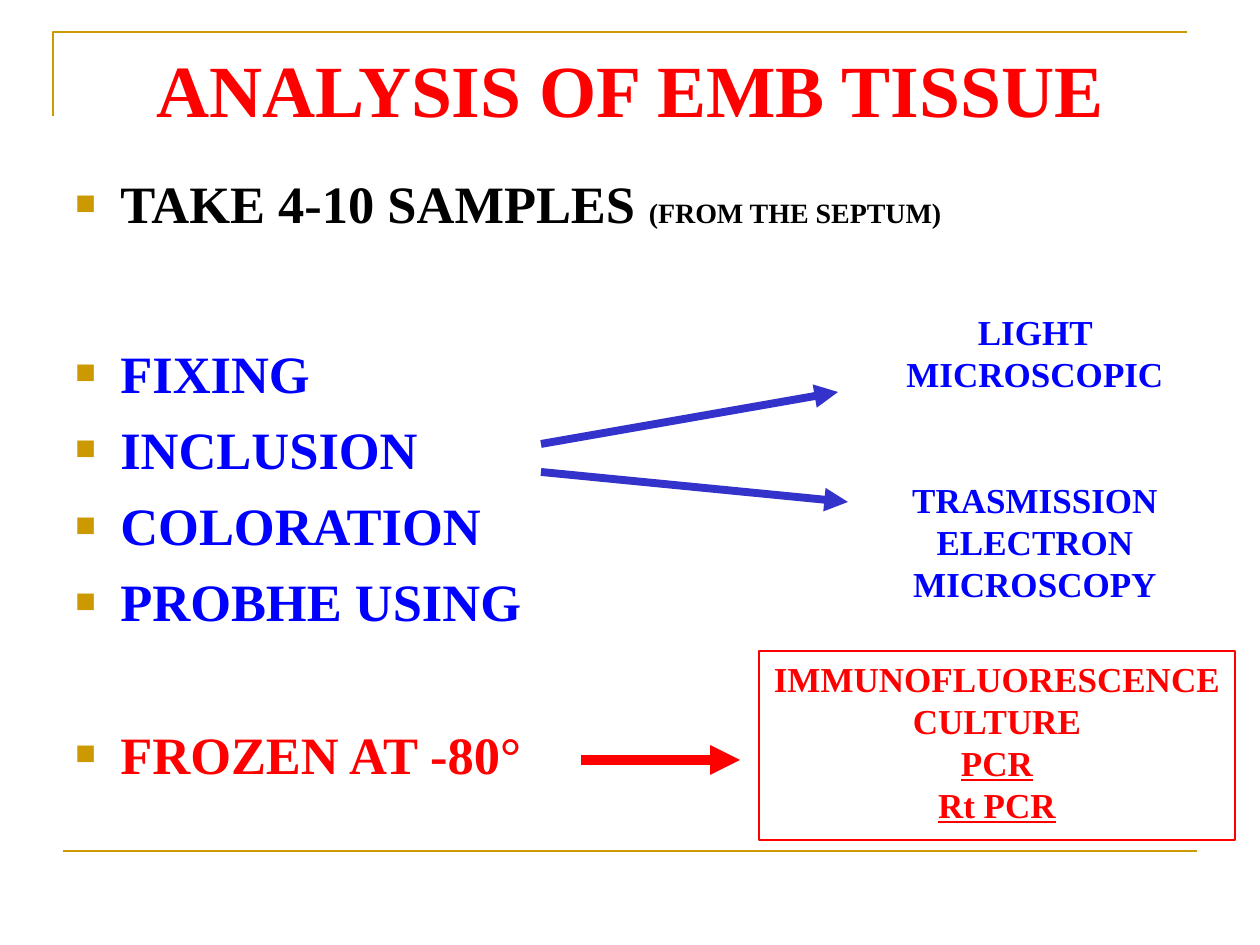
from dataclasses import dataclass

from lxml import etree
from pptx import Presentation, util as u
from pptx.dml.color import RGBColor
from pptx.enum import shapes, text
from pptx.oxml.ns import qn

PX = 914400 / 126  # EMU in one px


@dataclass(frozen=True)
class Theme:
    font: str = "Times New Roman"
    gold: str = "CC9900"
    red: str = "FF0000"
    blue: str = "0000FF"
    navy: str = "3333CC"
    black: str = "000000"
    title: int = 42
    body: int = 30
    label: int = 20
    note: int = 16
    thin: float = 1.5
    thick: float = 4.5
    heavy: float = 5.67


def emu(*vals):
    return [u.Emu(round(v * PX)) for v in vals]


def rgb(code):
    return RGBColor.from_string(code)


class Page:
    def __init__(self, slide, theme):
        self.slide = slide
        self.items = slide.shapes
        self.theme = theme

    def run(self, para, words, size, color, under=False):
        run = para.add_run()
        run.text = words
        font = run.font
        font.name, font.size, font.bold = self.theme.font, u.Pt(size), True
        font.color.rgb = rgb(color)
        if under:
            font.underline = True

    def frame(self, shape):
        frame = shape.text_frame
        frame.word_wrap = True
        frame.auto_size = text.MSO_AUTO_SIZE.NONE
        frame.vertical_anchor = text.MSO_ANCHOR.TOP
        return frame

    def paras(self, frame, count):
        return [frame.paragraphs[0]] + [frame.add_paragraph() for _ in range(count - 1)]

    def title(self, box, words):
        shape = self.items.title
        shape.left, shape.top, shape.width, shape.height = emu(*box)
        para = self.frame(shape).paragraphs[0]
        para.alignment = text.PP_ALIGN.CENTER
        self.run(para, words, self.theme.title, self.theme.red)

    def bullet(self, para):
        props = para._p.get_or_add_pPr()
        indent = emu(45)[0]
        props.set("marL", str(indent))
        props.set("indent", str(-indent))
        color = etree.SubElement(props, qn("a:buClr"))
        etree.SubElement(color, qn("a:srgbClr"), val=self.theme.gold)
        etree.SubElement(props, qn("a:buSzPct"), val="65000")
        etree.SubElement(props, qn("a:buFont"), typeface=self.theme.font)
        etree.SubElement(props, qn("a:buChar"), char="■")

    def bullets(self, box, rows):
        frame = self.frame(self.items.add_textbox(*emu(*box)))
        for para, (gap, runs) in zip(self.paras(frame, len(rows)), rows):
            para.space_before = u.Pt(gap)
            self.bullet(para)
            for run in runs:
                self.run(para, *run)

    def label(self, box, rows, color, gap=0, edge=False):
        if edge:
            shape = self.items.add_shape(shapes.MSO_SHAPE.RECTANGLE, *emu(*box))
            shape.shadow.inherit = False
            shape.fill.background()
            self.stroke(shape.line, color, self.theme.thin)
        else:
            shape = self.items.add_textbox(*emu(*box))
        paras = self.paras(self.frame(shape), len(rows))
        for i, (para, (words, under)) in enumerate(zip(paras, rows)):
            para.alignment = text.PP_ALIGN.CENTER
            if i:
                para.space_before = u.Pt(gap)
            self.run(para, words, self.theme.label, color, under)

    def stroke(self, line, color, width):
        line.color.rgb = rgb(color)
        line.width = u.Pt(width)

    def line(self, ends, color, width, arrow=False):
        line = self.items.add_connector(shapes.MSO_CONNECTOR.STRAIGHT, *emu(*ends))
        self.stroke(line.line, color, width)
        props = line._element.spPr
        if arrow:
            etree.SubElement(props.find(qn("a:ln")), qn("a:tailEnd"), type="triangle")
        etree.SubElement(props, qn("a:effectLst"))

    def corner(self, start, *points):
        pen = self.items.build_freeform(*start, scale=PX)
        pen.add_line_segments(points, close=False)
        shape = pen.convert_to_shape()
        shape.shadow.inherit = False
        shape.fill.background()
        self.stroke(shape.line, self.theme.gold, self.theme.thin)


def main():
    deck = Presentation()
    deck.slide_width, deck.slide_height = emu(1260, 945)
    look = Theme()
    page = Page(deck.slides.add_slide(deck.slide_layouts[5]), look)

    # Gold border lines
    page.corner((53, 116), (53, 32), (1187, 32))
    page.line((63, 851, 1197, 851), look.gold, look.thin)

    # Title
    page.title((63, 38, 1134, 190), "ANALYSIS OF EMB TISSUE")

    # Steps: space before, then runs
    steps = [
        (7.5, [("TAKE 4-10 SAMPLES ", look.body, look.black),
               ("(FROM THE SEPTUM)", look.note, look.black)]),
        (61, [("FIXING", look.body, look.blue)]),
    ]
    steps += [(7.5, [(word, look.body, look.blue)])
              for word in ("INCLUSION", "COLORATION", "PROBHE USING")]
    steps.append((51, [("FROZEN AT -80°", look.body, look.red)]))
    page.bullets((63, 165, 1134, 665), steps)

    # Arrows to the methods
    page.line((581, 760, 740, 760), look.red, look.heavy, arrow=True)
    page.line((541, 444, 838, 392), look.navy, look.thick, arrow=True)
    page.line((541, 472, 848, 502), look.navy, look.thick, arrow=True)

    # Methods
    page.label((858, 304, 354, 268),
               [("LIGHT MICROSCOPIC", False),
                ("TRASMISSION ELECTRON MICROSCOPY", False)],
               look.blue, gap=48)
    page.label((759, 651, 476, 189),
               [("IMMUNOFLUORESCENCE", False), ("CULTURE", False),
                ("PCR", True), ("Rt PCR", True)],
               look.red, edge=True)

    deck.save("out.pptx")


if __name__ == "__main__":
    main()
